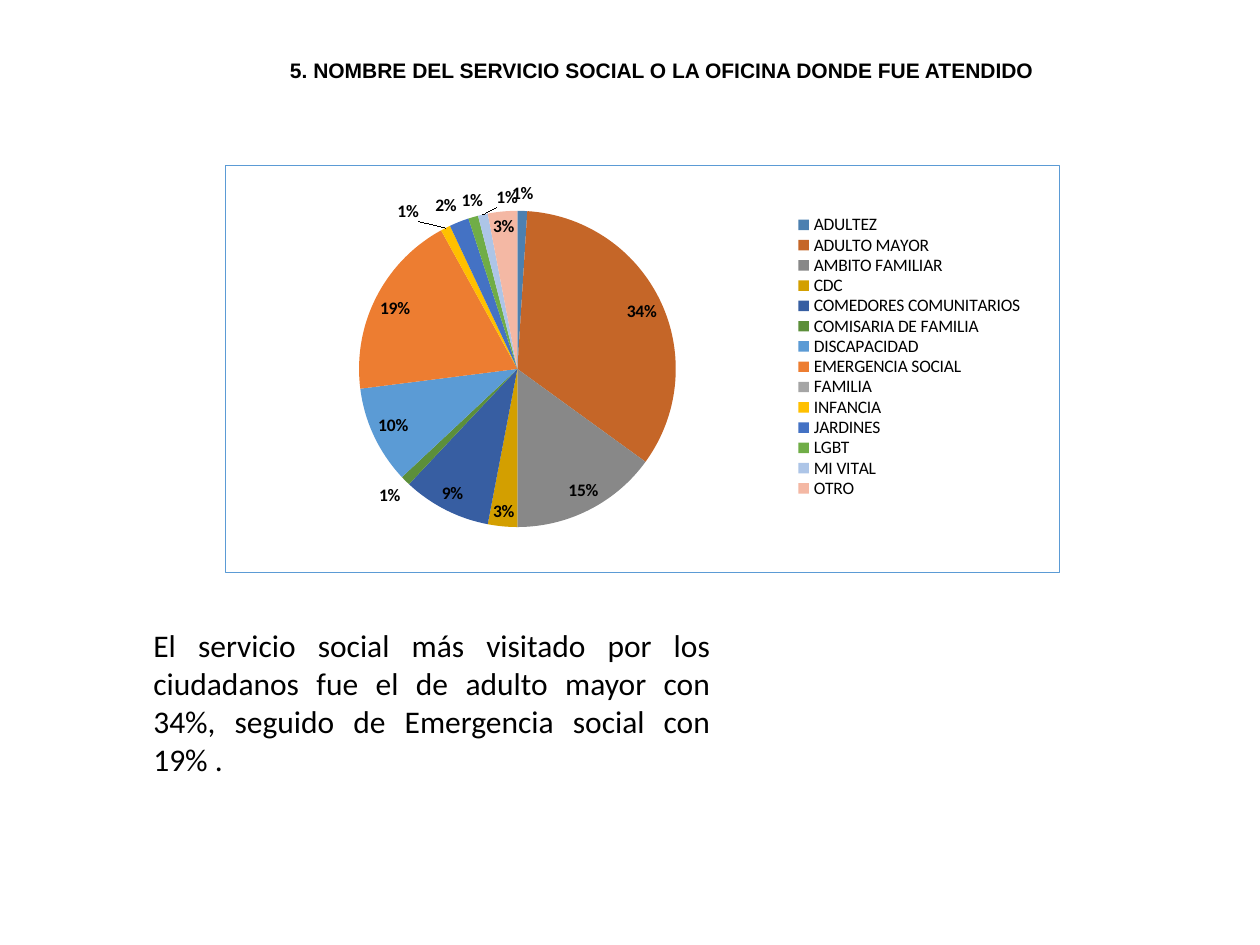
from lxml.etree import SubElement
from pptx import Presentation
from pptx.chart.data import CategoryChartData
from pptx.dml.color import RGBColor
from pptx.enum.chart import XL_CHART_TYPE, XL_LABEL_POSITION, XL_LEGEND_POSITION
from pptx.enum.text import MSO_ANCHOR, MSO_AUTO_SIZE, PP_ALIGN
from pptx.oxml import parse_xml
from pptx.oxml.ns import nsdecls, qn
from pptx.util import Pt

EMU_PER_PX = 914400 / 126

SERVICES = [
    ("ADULTEZ", 1, "4C80B0"),
    ("ADULTO MAYOR", 34, "C56628"),
    ("AMBITO FAMILIAR", 15, "888888"),
    ("CDC", 3, "D39F00"),
    ("COMEDORES COMUNITARIOS", 9, "375EA2"),
    ("COMISARIA DE FAMILIA", 1, "5C8F3A"),
    ("DISCAPACIDAD", 10, "5B9BD5"),
    ("EMERGENCIA SOCIAL", 19, "ED7D31"),
    ("FAMILIA", 0, "A5A5A5"),
    ("INFANCIA", 1, "FFC000"),
    ("JARDINES", 2, "4472C4"),
    ("LGBT", 1, "70AD47"),
    ("MI VITAL", 1, "ADC5E7"),
    ("OTRO", 3, "F4B8A4"),
]


def px(n):
    return round(n * EMU_PER_PX)


def rgb(color):
    return RGBColor.from_string(color)


class SlideBuilder:
    """Hold the style and the current slide, and add its elements."""

    text_color = "000000"
    body_font = "Calibri"
    title_font = "Arial"
    border_color = "5B9BD5"

    def __init__(self, prs):
        self.s = prs.slides.add_slide(prs.slide_layouts[5])

    def place(self, sp, box):
        sp.left, sp.top, sp.width, sp.height = map(px, box)

    def style(self, font, name, size, bold=False):
        font.name, font.size, font.bold = name, Pt(size), bold
        font.color.rgb = rgb(self.text_color)

    def title(self, text, box):
        sp = self.s.shapes.title
        self.place(sp, box)
        tf = sp.text_frame
        tf.text = text
        tf.vertical_anchor = MSO_ANCHOR.MIDDLE
        tf.auto_size = MSO_AUTO_SIZE.NONE
        tf.margin_left = px(19)
        p = tf.paragraphs[0]
        p.alignment, p.line_spacing = PP_ALIGN.LEFT, 0.9
        self.style(p.font, self.title_font, 12, True)

    def text(self, text, box):
        tf = self.s.shapes.add_textbox(*map(px, box)).text_frame
        tf.word_wrap = True
        tf.auto_size = MSO_AUTO_SIZE.SHAPE_TO_FIT_TEXT
        p = tf.paragraphs[0]
        p.text, p.alignment = text, PP_ALIGN.JUSTIFY
        self.style(p.font, self.body_font, 18)

    def layout(self, parent, inner=False, **fractions):
        for old in parent.findall(qn("c:layout")):
            parent.remove(old)
        layout = parse_xml(f"<c:layout {nsdecls('c')}><c:manualLayout/></c:layout>")
        manual = layout[0]
        if inner:
            SubElement(manual, qn("c:layoutTarget"), val="inner")
        for axis in "xy":
            SubElement(manual, qn(f"c:{axis}Mode"), val="edge")
        for key in "xywh":
            SubElement(manual, qn(f"c:{key}"), val=str(fractions[key]))
        parent.insert(0 if inner else 1, layout)

    def border(self, chart):
        chart.font._element.getparent().getparent().getparent().addprevious(parse_xml(
            f'<c:spPr {nsdecls("c", "a")}><a:noFill/><a:ln w="{Pt(0.75)}"><a:solidFill>'
            f'<a:srgbClr val="{self.border_color}"/></a:solidFill></a:ln></c:spPr>'))

    def pie(self, rows, box):
        names, values, colors = zip(*rows)
        data = CategoryChartData(number_format="0")
        data.categories = names
        data.add_series("Series 1", values)
        chart = self.s.shapes.add_chart(XL_CHART_TYPE.PIE, *map(px, box), data).chart
        chart.has_title = False
        self.style(chart.font, self.body_font, 10)
        self.border(chart)
        chart.has_legend = True
        chart.legend.position = XL_LEGEND_POSITION.RIGHT
        chart.legend.include_in_layout = False
        self.style(chart.legend.font, self.body_font, 10)
        plot = chart.plots[0]
        plot.vary_by_categories = True
        for i, color in enumerate(colors):
            fill = plot.series[0].points[i].format.fill
            fill.solid()
            fill.fore_color.rgb = rgb(color)
        labels = plot.series[0].data_labels
        labels.show_value, labels.show_percentage = False, True
        labels.number_format, labels.number_format_is_linked = "0%", False
        labels.position = XL_LABEL_POSITION.BEST_FIT
        self.style(labels.font, self.body_font, 10, True)
        area = chart._chartSpace.chart.plotArea
        self.layout(area, True, x=0.16, y=0.11, w=0.38, h=0.78)
        self.layout(chart.legend._element, x=0.67, y=0.12, w=0.3, h=0.7)


def main():
    prs = Presentation()
    prs.slide_width, prs.slide_height = px(1260), px(945)
    slide = SlideBuilder(prs)
    slide.title("5. NOMBRE DEL SERVICIO SOCIAL O LA OFICINA DONDE FUE ATENDIDO",
                (271, 50, 902, 43))
    slide.pie(SERVICES, (225, 165, 835, 408))
    slide.text("El servicio social más visitado por los ciudadanos fue el de adulto mayor "
               "con 34%, seguido de Emergencia social con 19% .", (141, 620, 582, 165))
    prs.save("out.pptx")


if __name__ == "__main__":
    main()
